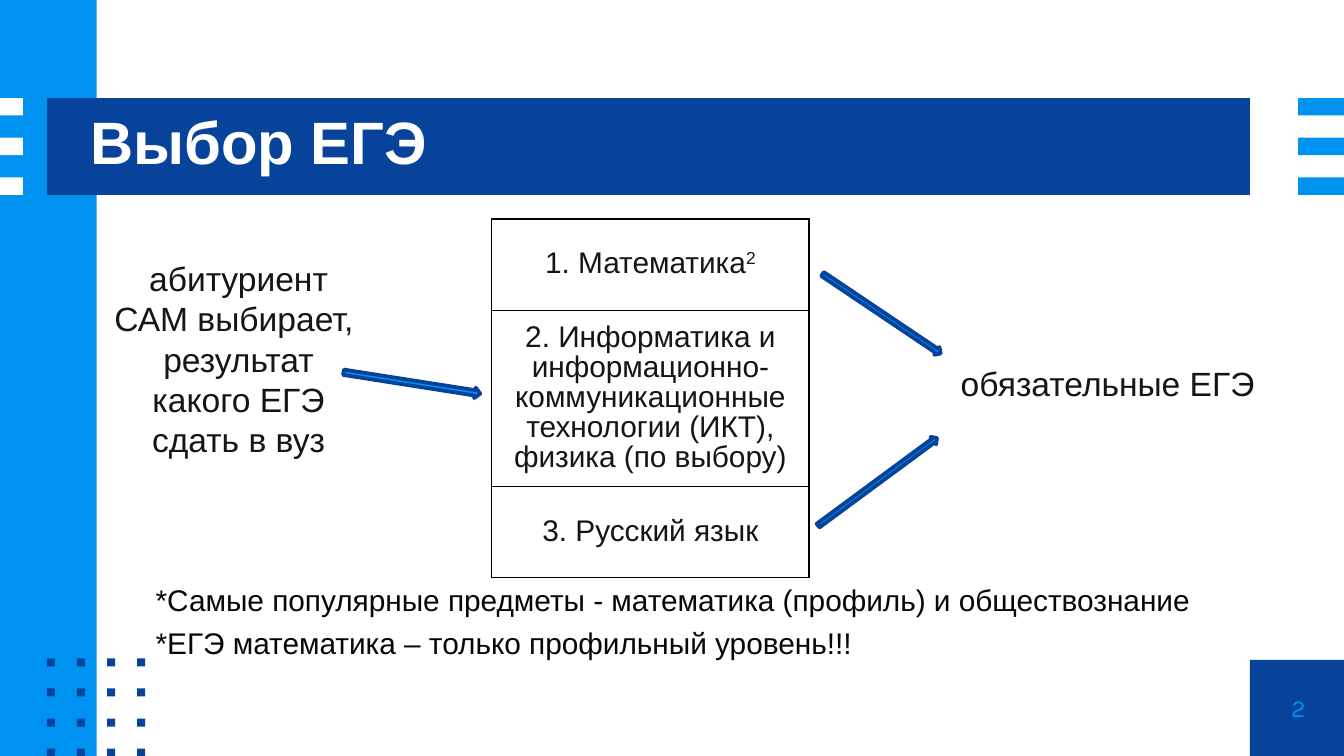
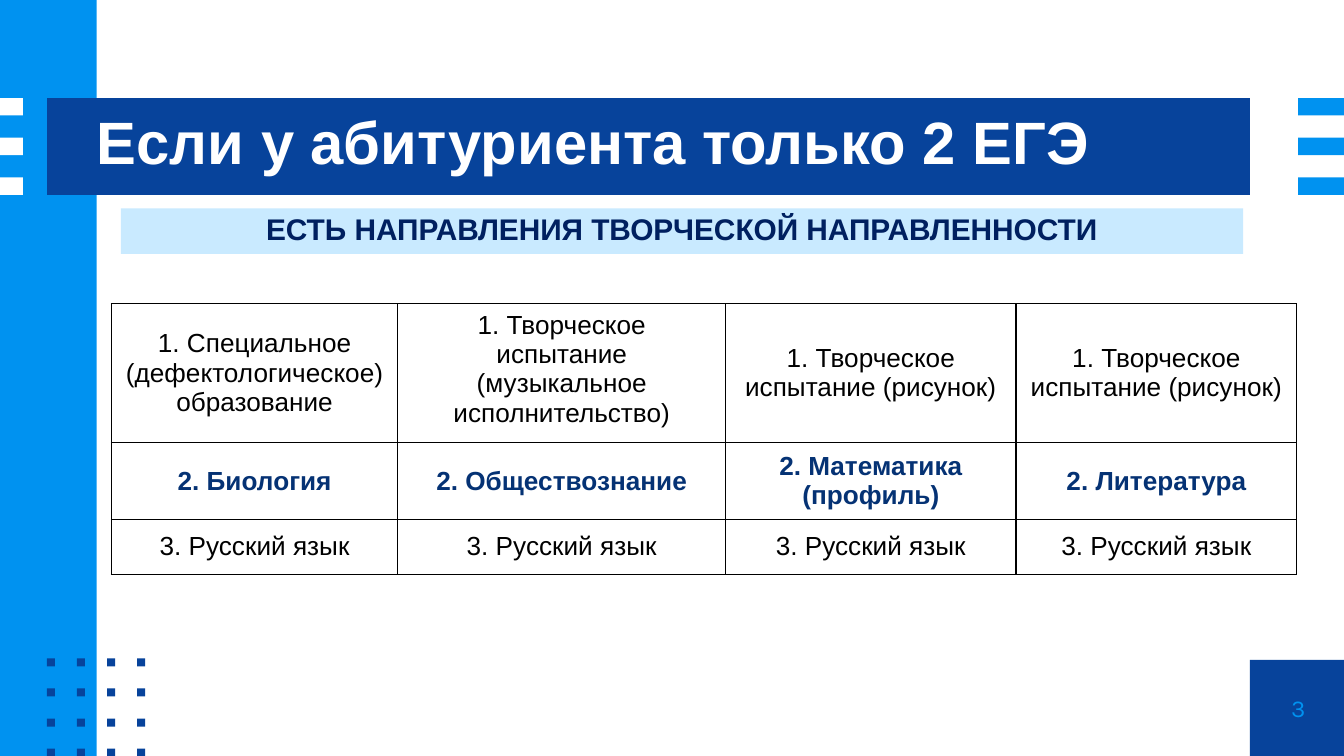
"""Builds two slides on choosing the school-leaving exams."""
from itertools import product

from lxml.etree import SubElement
from pptx import Presentation
from pptx.dml.color import RGBColor
from pptx.enum.shapes import MSO_SHAPE as SHAPE
from pptx.enum.text import MSO_ANCHOR as ANCHOR, PP_ALIGN as ALIGN
from pptx.oxml.ns import qn
from pptx.util import Inches, Pt

NAVY = RGBColor(0x07, 0x43, 0x9B)
SKY = RGBColor(0x00, 0x92, 0xF0)
PALE = RGBColor(0xC9, 0xEA, 0xFF)
DEEP = RGBColor(0x00, 0x20, 0x60)
SUBJECT = RGBColor(0x05, 0x32, 0x74)
INK = RGBColor(0x14, 0x14, 0x1A)
NOTE = RGBColor(0x07, 0x07, 0x09)
BLACK = RGBColor(0, 0, 0)
WHITE = RGBColor(255, 255, 255)

WIDTH = 10
HEIGHT = WIDTH * 9 / 16
MARGIN, BAND_TOP, BAND = 0.35, 0.73, 0.72
CORNER = (9.3, 4.91, BAND, BAND)
STRIPE, STRIPE_STEP = 0.13, 0.59 / 2
DOT, DOT_TOP, DOT_STEP = 0.06, 4.9, 0.67 / 3

CHOICE_TITLE = "Выбор ЕГЭ"
APPLICANT = ["абитуриент САМ выбирает, ", "результат какого ЕГЭ сдать в вуз"]
REQUIRED = ["обязательные ЕГЭ"]
REMARKS = [
    "*Самые популярные предметы - математика (профиль) и обществознание",
    "*ЕГЭ математика – только профильный уровень!!!",
]
EXAMS = [
    ["1. Математика^2"],
    ["2. Информатика и информационно-коммуникационные технологии (ИКТ), физика (по выбору)"],
    ["3. Русский язык"],
]
ARROWS = [
    (2.55, 2.81, 1.03, 0.08, 8.9),
    (6.03, 2.3, 1.06, 0.07, 33.9),
    (5.98, 3.55, 1.1, 0.07, 323.6),
]

CREATIVE_TITLE = "Если у абитуриента только 2 ЕГЭ"
CREATIVE_BANNER = ["ЕСТЬ НАПРАВЛЕНИЯ ТВОРЧЕСКОЙ НАПРАВЛЕННОСТИ"]
DIRECTIONS = [
    [
        "1. Специальное (дефектологическое) образование",
        "1. Творческое испытание (музыкальное исполнительство)",
        "1. Творческое испытание (рисунок)",
        "1. Творческое испытание (рисунок)",
    ],
    ["2. Биология", "2. Обществознание", "2. Математика (профиль)", "2. Литература"],
    ["3. Русский язык"] * 4,
]


def inches(values):
    return [Inches(value) for value in values]


def write(frame, lines, size, color, bold=False, font="Arial", align=ALIGN.CENTER,
          spacing=None, before=None):
    frame.word_wrap = True
    frame.text = "\n".join(line.partition("^")[0] for line in lines)
    for paragraph, line in zip(frame.paragraphs, lines):
        raised = line.partition("^")[2]
        if raised:
            run = paragraph.add_run()
            run.text = raised
            run.font._element.set("baseline", "30000")
        paragraph.alignment = align
        paragraph.line_spacing = spacing
        paragraph.space_before = before
        for run in paragraph.runs:
            run.font.name, run.font.size = font, Pt(size)
            run.font.bold, run.font.color.rgb = bold, color


def add_text(slide, box, lines, size, color, tight=False, **style):
    frame = slide.shapes.add_textbox(*inches(box)).text_frame
    if tight:
        frame.margin_left = frame.margin_right = frame.margin_top = frame.margin_bottom = 0
        frame.vertical_anchor = ANCHOR.MIDDLE
    write(frame, lines, size, color, **style)


def add_block(slide, box, fill, kind=SHAPE.RECTANGLE):
    block = slide.shapes.add_shape(kind, *inches(box))
    block.shadow.inherit = False
    block.fill.solid()
    block.fill.fore_color.rgb = fill
    block.line.fill.background()
    return block


def add_arrow(slide, left, top, width, height, angle):
    arrow = add_block(slide, (left, top, width, height), SKY, SHAPE.RIGHT_ARROW)
    arrow.rotation = angle
    arrow.line.color.rgb = NAVY
    arrow.line.width = Pt(2)


def add_borders(cell):
    properties = cell._tc.get_or_add_tcPr()
    for side in ("a:lnL", "a:lnR", "a:lnT", "a:lnB"):
        line = SubElement(properties, qn(side), w=str(Pt(0.75)))
        SubElement(SubElement(line, qn("a:solidFill")), qn("a:srgbClr"), val=str(BLACK))


def add_grid(slide, left, top, widths, heights, rows, size, styles, **shared):
    box = inches((left, top, sum(widths), sum(heights)))
    table = slide.shapes.add_table(len(heights), len(widths), *box).table
    table.first_row = table.horz_banding = False
    for column, width in zip(table.columns, widths):
        column.width = Inches(width)
    for row, height, texts, style in zip(table.rows, heights, rows, styles):
        row.height = Inches(height)
        for cell, text in zip(row.cells, texts):
            add_borders(cell)
            cell.fill.background()
            cell.vertical_anchor = ANCHOR.MIDDLE
            write(cell.text_frame, [text], size, **style, **shared)
    return table


def add_page(deck, title, number, title_left):
    slide = deck.slides.add_slide(deck.slide_layouts[6])
    add_block(slide, CORNER, NAVY)
    add_block(slide, (0, 0, BAND, HEIGHT), SKY)
    add_block(slide, (MARGIN, BAND_TOP, CORNER[0] - MARGIN, BAND), NAVY)
    for left, width, color in ((0, 0.17, WHITE), (9.66, 0.34, SKY)):
        for step in range(3):
            add_block(slide, (left, BAND_TOP + step * STRIPE_STEP, width, STRIPE), color)
    for row, column in product(range(4), repeat=2):
        add_block(slide, (MARGIN + column * DOT_STEP, DOT_TOP + row * DOT_STEP, DOT, DOT), NAVY)
    add_text(slide, CORNER, [str(number)], 13, SKY, tight=True, font="Karla")
    add_text(slide, (title_left, 0.61, 8.58, 0.94), [title], 32, WHITE, tight=True,
             bold=True, align=ALIGN.LEFT, spacing=0.9)
    return slide


def build_choice(deck):
    slide = add_page(deck, CHOICE_TITLE, 2, 0.67)
    add_text(slide, (0.75, 1.87, 2.05, 1.61), APPLICANT, 18, INK)
    add_text(slide, (7.05, 2.65, 2.41, 0.4), REQUIRED, 18, INK, align=ALIGN.LEFT)
    add_text(slide, (1.06, 4.31, 8.35, 0.67), REMARKS, 16, NOTE, align=ALIGN.LEFT,
             spacing=0.9, before=Pt(6))
    for arrow in ARROWS:
        add_arrow(slide, *arrow)
    add_grid(slide, 3.66, 1.63, [2.36], [0.68, 1.31, 0.68], EXAMS, 16,
             [{"color": INK}] * 3, spacing=0.9, before=Pt(6))


def build_creative(deck):
    slide = add_page(deck, CREATIVE_TITLE, 3, 0.72)
    banner = add_block(slide, (0.9, 1.55, 8.35, 0.34), PALE).text_frame
    banner.vertical_anchor = ANCHOR.TOP
    write(banner, CREATIVE_BANNER, 16, DEEP, bold=True, spacing=0.9, before=Pt(6))
    plain, strong = {"color": BLACK}, {"color": SUBJECT, "bold": True}
    directions = add_grid(slide, 0.83, 2.26, [2.13, 2.44, 2.16, 2.09], [1.03, 0.57, 0.41],
                          DIRECTIONS, 14, [plain, strong, plain])
    directions.cell(0, 1).vertical_anchor = ANCHOR.TOP


def main():
    deck = Presentation()
    deck.slide_width, deck.slide_height = inches((WIDTH, HEIGHT))
    build_choice(deck)
    build_creative(deck)
    deck.save("out.pptx")


if __name__ == "__main__":
    main()
